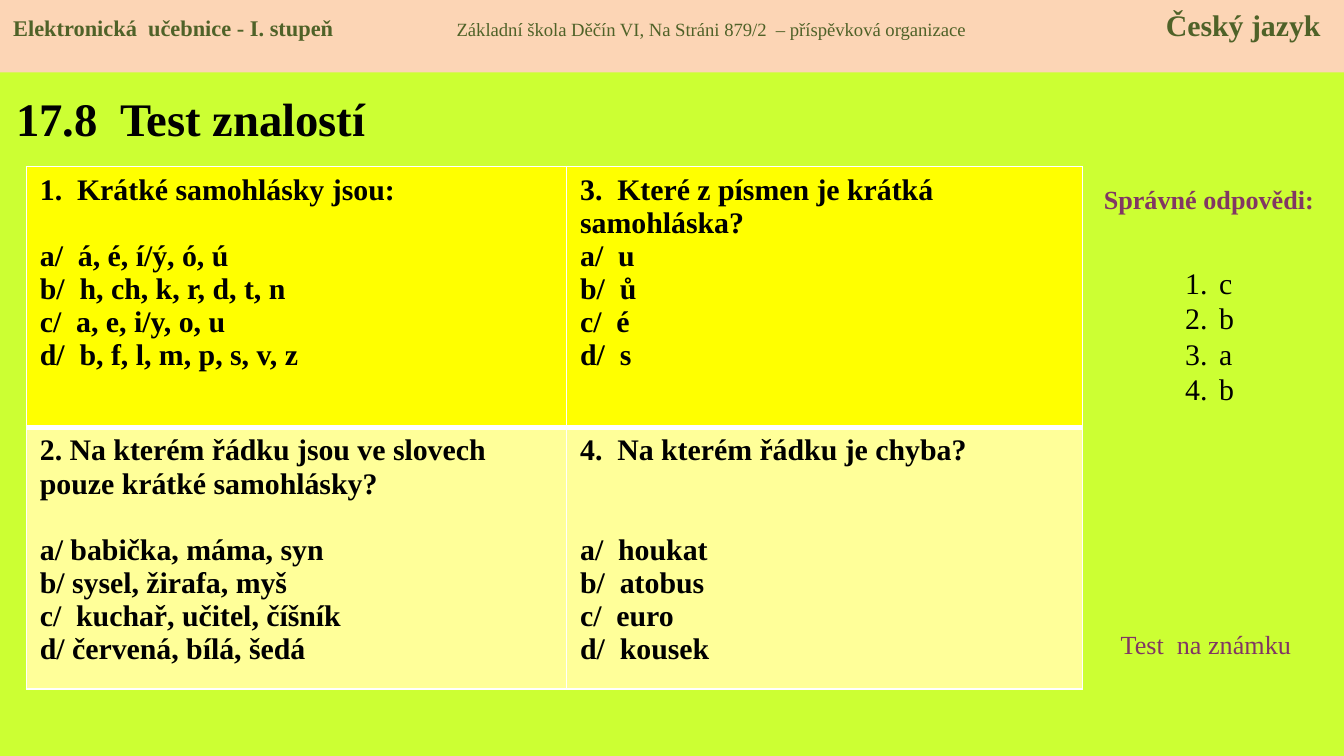
from dataclasses import dataclass

from lxml import etree
from pptx import Presentation
from pptx.dml.color import RGBColor
from pptx.enum.shapes import MSO_SHAPE
from pptx.enum.text import MSO_ANCHOR, PP_ALIGN
from pptx.oxml.ns import qn
from pptx.util import Cm, Pt

RECTANGLE = MSO_SHAPE.RECTANGLE
TOP, MIDDLE = MSO_ANCHOR.TOP, MSO_ANCHOR.MIDDLE
LEFT, CENTER = PP_ALIGN.LEFT, PP_ALIGN.CENTER
TITLE_ONLY = 5


@dataclass(frozen=True)
class Theme:
    font: str = "Times New Roman"
    background: str = "CCFF33"
    banner: str = "FCD5B5"
    banner_text: str = "4F6228"
    ink: str = "000000"
    accent: str = "813763"
    border: str = "FFFFFF"
    row_fills: tuple = ("FFFF00", "FFFF99")
    title: float = 25
    body: float = 16
    label: float = 14
    subject: float = 16
    book: float = 12
    school: float = 10
    line: float = 17.7
    answer_line: float = 19
    thin: float = 1
    thick: float = 3


THEME = Theme()

QUESTIONS = [
    [
        (["1.  Krátké samohlásky jsou:"], 1,
         ["a/  á, é, í/ý, ó, ú", "b/  h, ch, k, r, d, t, n",
          "c/  a, e, i/y, o, u", "d/  b, f, l, m, p, s, v, z"]),
        (["3.  Které z písmen je krátká", "samohláska?"], 0,
         ["a/  u", "b/  ů", "c/  é", "d/  s"]),
    ],
    [
        (["2. Na kterém řádku jsou ve slovech", "pouze krátké samohlásky?"], 1,
         ["a/ babička, máma, syn", "b/ sysel, žirafa, myš",
          "c/  kuchař, učitel, číšník", "d/ červená, bílá, šedá"]),
        (["4.  Na kterém řádku je chyba?"], 2,
         ["a/  houkat", "b/  atobus", "c/  euro", "d/  kousek"]),
    ],
]


def write(paragraph, text, size=THEME.body, color=THEME.ink, bold=False,
          align=LEFT, before=0, spacing=None):
    paragraph.alignment = align
    paragraph.space_before = Pt(before)
    if spacing:
        paragraph.line_spacing = Pt(spacing)
    run = paragraph.add_run()
    run.text = text
    run.font.name = THEME.font
    run.font.size = Pt(size)
    run.font.bold = bold
    run.font.color.rgb = RGBColor.from_string(color)


def paragraph_at(frame, index):
    return frame.add_paragraph() if index else frame.paragraphs[0]


def text_frame(slide, box):
    frame = slide.shapes.add_textbox(*box).text_frame
    frame.word_wrap = True
    return frame


def set_tab_stops(paragraph, stops):
    tabs = etree.SubElement(paragraph._p.get_or_add_pPr(), qn("a:tabLst"))
    for position, align in stops:
        etree.SubElement(tabs, qn("a:tab"), pos=str(position), algn=align)


def number(paragraph, indent):
    properties = paragraph._p.get_or_add_pPr()
    properties.set("marL", str(indent))
    properties.set("indent", str(-indent))
    etree.SubElement(properties, qn("a:buFont"), typeface=THEME.font)
    etree.SubElement(properties, qn("a:buAutoNum"), type="arabicPeriod")


def set_borders(cell, top, bottom):
    widths = {"L": THEME.thin, "R": THEME.thin, "T": top, "B": bottom}
    for side, width in widths.items():
        line = etree.SubElement(cell._tc.get_or_add_tcPr(),
                                qn(f"a:ln{side}"), w=str(Pt(width)))
        fill = etree.SubElement(line, qn("a:solidFill"))
        etree.SubElement(fill, qn("a:srgbClr"), val=THEME.border)


def add_banner(slide, box):
    banner = slide.shapes.add_shape(RECTANGLE, *box)
    banner.shadow.inherit = False
    banner.fill.solid()
    banner.fill.fore_color.rgb = RGBColor.from_string(THEME.banner)
    banner.line.fill.background()
    frame = banner.text_frame
    frame.vertical_anchor = TOP
    heading = frame.paragraphs[0]
    parts = [
        ("Elektronická  učebnice - I. stupeň\t", THEME.book, True),
        ("Základní škola Děčín VI, Na Stráni 879/2  – příspěvková organizace\t",
         THEME.school, False),
        ("Český jazyk", THEME.subject, True),
    ]
    for text, size, bold in parts:
        write(heading, text, size=size, bold=bold, color=THEME.banner_text)
    set_tab_stops(heading, [(Cm(8.38), "l"), (Cm(24.71), "r")])


def add_title(slide, box):
    title = slide.shapes.title
    title.left, title.top, title.width, title.height = box
    title.text_frame.vertical_anchor = MIDDLE
    write(title.text_frame.paragraphs[0], "17.8  Test znalostí",
          size=THEME.title, bold=True)


def fill_question(cell, question, gap_lines, options):
    lines = question + options
    for index, line in enumerate(lines):
        gap = gap_lines * THEME.line if index == len(question) else 0
        write(paragraph_at(cell.text_frame, index), line, bold=True, before=gap)


def add_questions(slide, box):
    table = slide.shapes.add_table(len(QUESTIONS), len(QUESTIONS[0]), *box).table
    table.first_row = False
    table.horz_banding = False
    for column, width in zip(table.columns, (Cm(10.21), Cm(9.75))):
        column.width = width
    for row, questions in enumerate(QUESTIONS):
        top = THEME.thick if row else THEME.thin
        bottom = THEME.thin if row else THEME.thick
        for column, question in enumerate(questions):
            cell = table.cell(row, column)
            set_borders(cell, top, bottom)
            cell.fill.solid()
            cell.fill.fore_color.rgb = RGBColor.from_string(THEME.row_fills[row])
            fill_question(cell, *question)


def add_label(slide, box, text, **style):
    write(text_frame(slide, box).paragraphs[0], text,
          size=THEME.label, color=THEME.accent, **style)


def add_answers(slide, box):
    frame = text_frame(slide, box)
    frame.margin_top = Cm(0.82)
    for index, answer in enumerate("cbab"):
        paragraph = paragraph_at(frame, index)
        write(paragraph, answer, spacing=THEME.answer_line)
        number(paragraph, Cm(0.64))


def main():
    presentation = Presentation()
    presentation.slide_width = Cm(25.4)
    presentation.slide_height = Cm(14.29)
    slide = presentation.slides.add_slide(presentation.slide_layouts[TITLE_ONLY])
    slide.background.fill.solid()
    slide.background.fill.fore_color.rgb = RGBColor.from_string(THEME.background)

    add_title(slide, (Cm(0.05), Cm(1.4), Cm(8.1), Cm(1.65)))
    add_label(slide, (Cm(20.45), Cm(3.35), Cm(4.8), Cm(0.86)),
              "Správné odpovědi:", bold=True, align=CENTER)
    add_questions(slide, (Cm(0.5), Cm(3.15), Cm(19.96), Cm(9.86)))
    add_answers(slide, (Cm(22.15), Cm(4.19), Cm(1.4), Cm(5.05)))
    add_label(slide, (Cm(20.93), Cm(11.76), Cm(3.99), Cm(0.86)), "Test  na známku")
    add_banner(slide, (Cm(0), Cm(0), Cm(25.4), Cm(1.37)))
    presentation.save("out.pptx")


if __name__ == "__main__":
    main()
